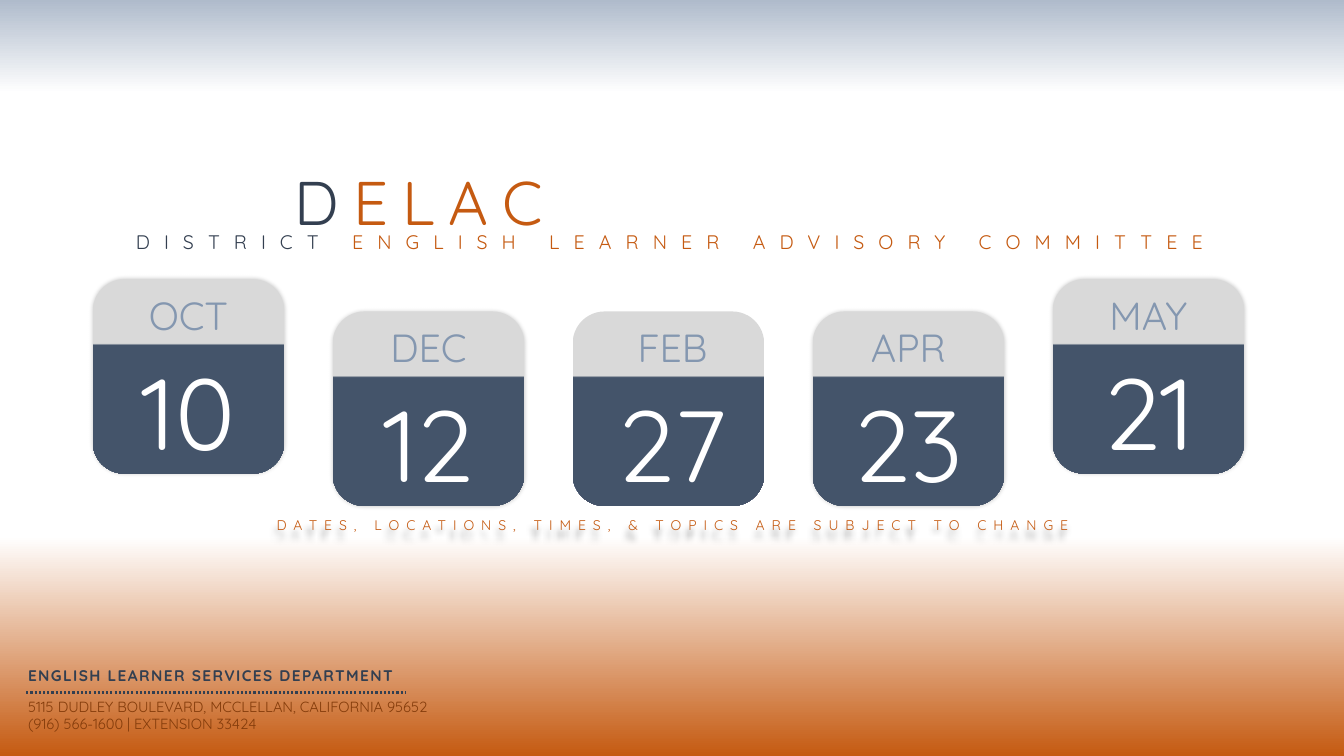
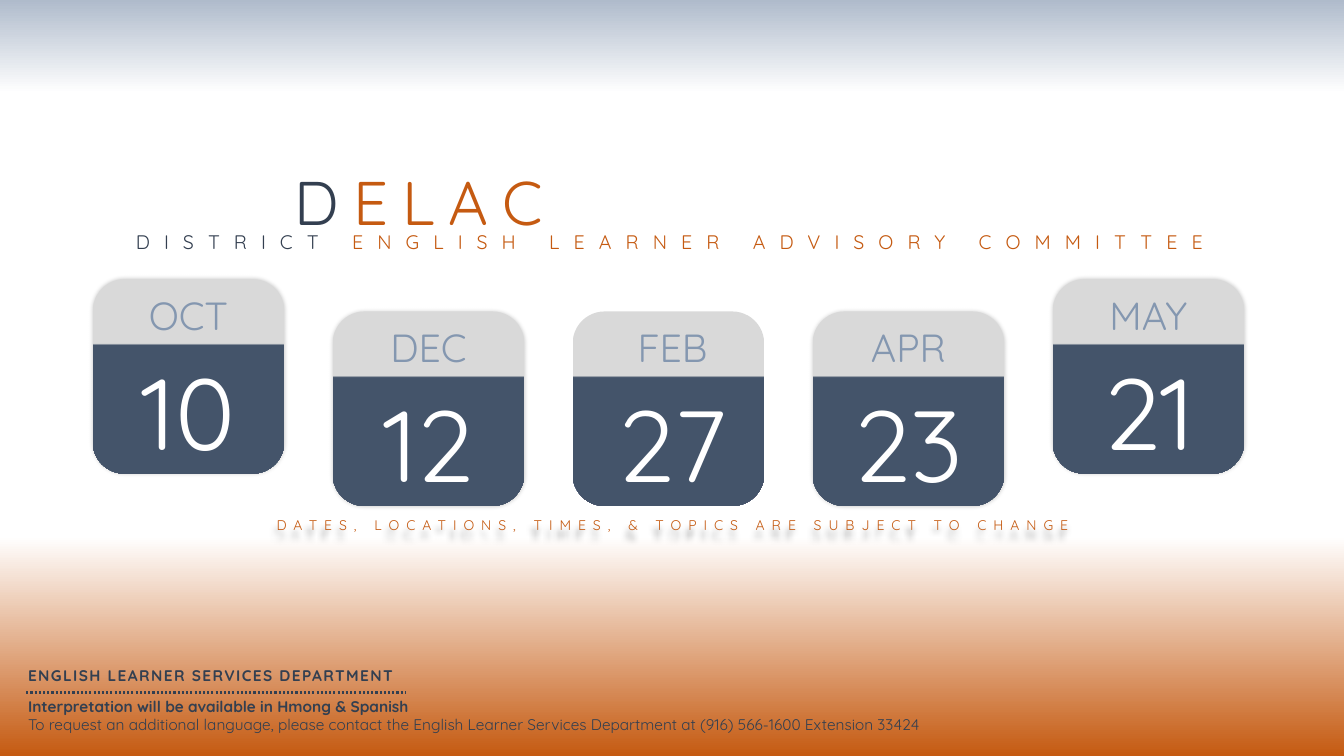
from lxml import etree
from pptx import Presentation
from pptx.dml.color import RGBColor
from pptx.enum.dml import MSO_LINE
from pptx.enum.shapes import MSO_CONNECTOR, MSO_SHAPE
from pptx.enum.text import MSO_AUTO_SIZE, PP_ALIGN
from pptx.oxml.ns import qn
from pptx.util import Inches, Pt

RECTANGLE = MSO_SHAPE.RECTANGLE
ROUNDED = MSO_SHAPE.ROUNDED_RECTANGLE
STRAIGHT = MSO_CONNECTOR.STRAIGHT
DOTTED = MSO_LINE.ROUND_DOT
LEFT, CENTER = PP_ALIGN.LEFT, PP_ALIGN.CENTER
GROW = MSO_AUTO_SIZE.SHAPE_TO_FIT_TEXT

FONT = "Quicksand"
WIDTH, HEIGHT = 13.33, 7.5
WHITE, GRAY, BLACK = "FFFFFF", "D9D9D9", "000000"
NAVY, SLATE, STEEL, MIST = "333F50", "44546A", "8497B0", "ADB9CA"
ORANGE, BROWN = "C55A11", "843C0B"

CARD_LEFT, CARD_PITCH = 0.92, 2.38
CARD_WIDTH, CARD_HEIGHT = 1.9, 1.93
HIGH, LOW = 2.77, 3.09
MEETINGS = [
    ("OCT", "10", HIGH, 0, 315),
    ("DEC", "12", LOW, 0, 315),
    ("FEB", "27", LOW, 0.04, None),
    ("APR", "23", LOW, 0, 199),
    ("MAY", "21", HIGH, 0, 225),
]
ADDRESS = [
    ("5115 DUDLEY BOULEVARD, MCCLELLAN, CALIFORNIA 95652", {"size": 10.5, "color": BROWN}),
    ("(916) 566-1600 | EXTENSION 33424", {"size": 10.5, "color": BROWN}),
]
INTERPRETATION = [
    ("Interpretation will be available in Hmong & Spanish",
     {"size": 11, "color": NAVY, "bold": True}),
    ("To request an additional language, please contact the English Learner "
     "Services Department at (916) 566-1600 Extension 33424",
     {"size": 11, "color": NAVY}),
]


def rgb(value):
    """Turn a hex string into a colour."""
    return RGBColor.from_string(value)


def add_shadow(shape, opacity, blur, distance, angle):
    """Give a shape a soft black shadow; lengths are in points."""
    shape.shadow.inherit = False
    effects = shape.element.spPr.find(qn("a:effectLst"))
    shadow = etree.SubElement(
        effects, qn("a:outerShdw"), blurRad=str(Pt(blur)),
        dist=str(Pt(distance)), dir=str(angle * 60000), rotWithShape="0")
    color = etree.SubElement(shadow, qn("a:srgbClr"), val=BLACK)
    etree.SubElement(color, qn("a:alpha"), val=str(opacity * 1000))


def add_gradient(slide, kind, box, stops):
    """Add a borderless shape that fades downwards between two stops."""
    shape = slide.shapes.add_shape(kind, *map(Inches, box))
    shape.shadow.inherit = False
    shape.line.fill.background()
    shape.fill.gradient()
    shape.fill.gradient_angle = 270
    for stop, (position, color) in zip(shape.fill.gradient_stops, stops):
        stop.position = position
        stop.color.rgb = rgb(color)
    return shape


def add_text(slide, box, runs, size, alignment=LEFT, spacing=0, bold=False,
             wrap=True, grow=False):
    """Add one line of text made of (text, colour) runs."""
    textbox = slide.shapes.add_textbox(*map(Inches, box))
    frame = textbox.text_frame
    frame.word_wrap = wrap
    if grow:
        frame.auto_size = GROW
    paragraph = frame.paragraphs[0]
    paragraph.alignment = alignment
    for text, color in runs:
        run = paragraph.add_run()
        run.text = text
        run.font.name = FONT
        run.font.size = Pt(size)
        run.font.bold = bold
        run.font.color.rgb = rgb(color)
        if spacing:
            run.font._element.set("spc", str(spacing * 100))
    return textbox


def add_bands(slide):
    """Draw the blue band at the top and the orange one at the bottom."""
    add_gradient(slide, RECTANGLE, (0, -0.03, WIDTH, 1.45), [(0, MIST), (0.66, WHITE)])
    add_gradient(slide, RECTANGLE, (0, 5.32, WIDTH, HEIGHT - 5.32), [(0, WHITE), (1, ORANGE)])


def add_title(slide, left, top):
    """Write the acronym above its full name."""
    add_text(slide, (left + 0.42, top, 4.97, 0.8),
             [("D", NAVY), ("ELAC", ORANGE)], 44, CENTER, spacing=10)
    add_text(slide, (left, top + 0.65, 10.94, 0.57),
             [("DISTRICT ", NAVY), ("ENGLISH LEARNER ADVISORY COMMITTEE", ORANGE)],
             14, spacing=10, wrap=False, grow=True)


def add_card(slide, left, top, month, day, text_shift, shadow_angle):
    """Draw a calendar card with a month and a day."""
    card = add_gradient(slide, ROUNDED, (left, top, CARD_WIDTH, CARD_HEIGHT),
                        [(0.33, GRAY), (0.34, SLATE)])
    if shadow_angle is not None:
        add_shadow(card, 20, 3, 0, shadow_angle)
    text_left = left + text_shift
    add_text(slide, (text_left, top + 0.07, CARD_WIDTH, 0.58), [(month, STEEL)], 28, CENTER)
    add_text(slide, (text_left, top + 0.65, CARD_WIDTH, 1.14), [(day, WHITE)], 72, CENTER)


def add_notice(slide, left, top):
    """Write the shadowed notice below the cards."""
    notice = add_text(slide, (left, top, 11.42, 0.27),
                      [("DATES, LOCATIONS, TIMES, & TOPICS ARE SUBJECT TO CHANGE", ORANGE)],
                      10, CENTER, spacing=5, grow=True)
    add_shadow(notice, 40, 4, 6, 115)


def add_footer(slide, left, top, details):
    """Write the department, a dotted rule and the detail lines."""
    add_text(slide, (left, top, 3.84, 0.29),
             [("ENGLISH LEARNER SERVICES DEPARTMENT", NAVY)], 11,
             spacing=1, bold=True, grow=True)
    rule_top = Inches(top + 0.31)
    rule = slide.shapes.add_connector(
        STRAIGHT, Inches(left + 0.08), rule_top, Inches(left + 3.85), rule_top)
    rule.line.color.rgb = rgb(NAVY)
    rule.line.width = Pt(1.5)
    rule.line.dash_style = DOTTED
    etree.SubElement(rule.element.spPr, qn("a:effectLst"))
    for index, (text, style) in enumerate(details):
        add_text(slide, (left, top + 0.31 + 0.17 * index, 13.06, 0.29),
                 [(text, style["color"])], style["size"],
                 bold=style.get("bold", False), grow=True)


def add_schedule_slide(presentation, details):
    """Build a meeting schedule with the given footer details."""
    slide = presentation.slides.add_slide(presentation.slide_layouts[6])
    add_bands(slide)
    add_title(slide, 1.25, 1.58)
    for index, (month, day, top, text_shift, shadow_angle) in enumerate(MEETINGS):
        add_card(slide, CARD_LEFT + index * CARD_PITCH, top, month, day,
                 text_shift, shadow_angle)
    add_notice(slide, 0.96, 5.08)
    add_footer(slide, 0.18, 6.56, details)


def main():
    """Build and save the presentation."""
    presentation = Presentation()
    presentation.slide_width = Inches(WIDTH)
    presentation.slide_height = Inches(HEIGHT)
    for details in (ADDRESS, INTERPRETATION):
        add_schedule_slide(presentation, details)
    presentation.save("out.pptx")


if __name__ == "__main__":
    main()
